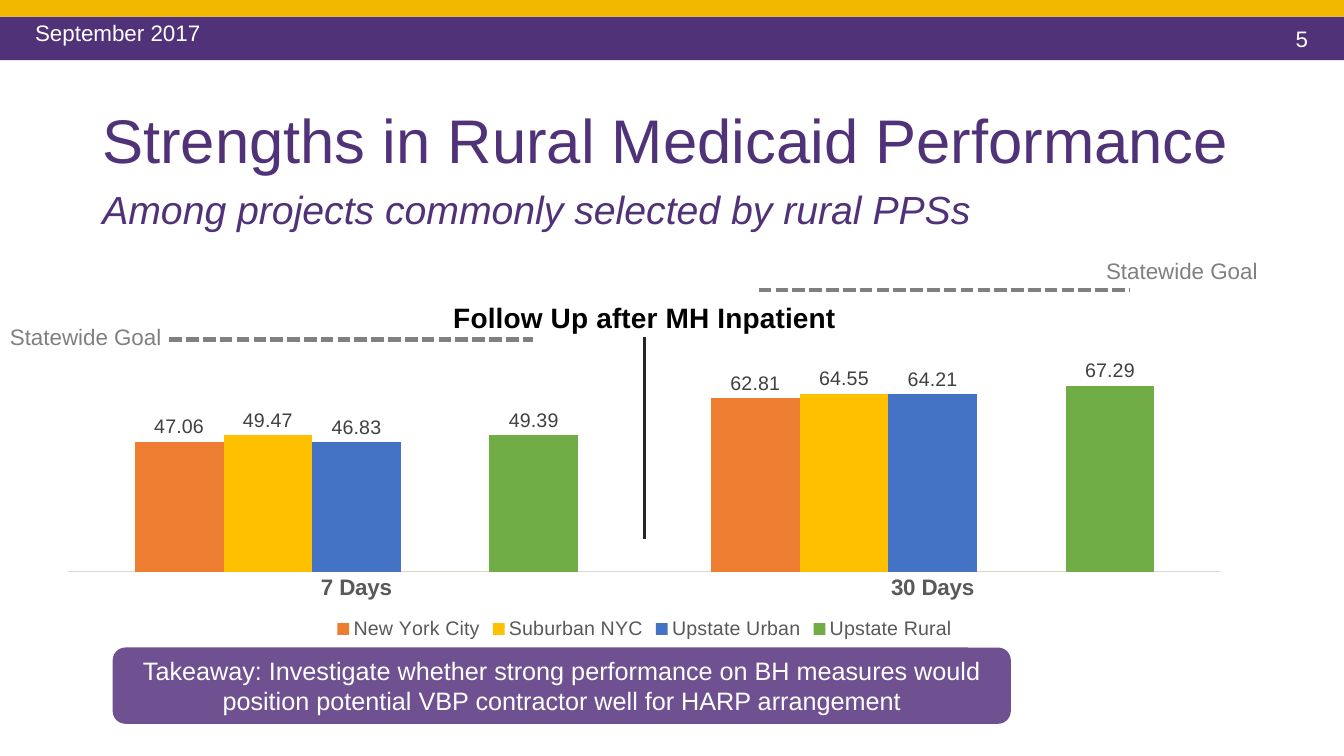
from lxml import etree
from pptx import Presentation
from pptx.chart.data import CategoryChartData
from pptx.dml.color import RGBColor
from pptx.enum.chart import XL_CHART_TYPE, XL_LABEL_POSITION, XL_LEGEND_POSITION, XL_TICK_MARK
from pptx.enum.dml import MSO_LINE
from pptx.enum.shapes import MSO_CONNECTOR, MSO_SHAPE
from pptx.enum.text import MSO_ANCHOR, PP_ALIGN
from pptx.oxml.ns import qn
from pptx.util import Pt

LEFT, CENTER, RIGHT = PP_ALIGN.LEFT, PP_ALIGN.CENTER, PP_ALIGN.RIGHT
TOP, MIDDLE = MSO_ANCHOR.TOP, MSO_ANCHOR.MIDDLE
RECTANGLE, ROUNDED = MSO_SHAPE.RECTANGLE, MSO_SHAPE.ROUNDED_RECTANGLE
COLUMNS = XL_CHART_TYPE.COLUMN_CLUSTERED
LEGEND_BOTTOM = XL_LEGEND_POSITION.BOTTOM
ABOVE_COLUMN = XL_LABEL_POSITION.OUTSIDE_END
NO_TICKS = XL_TICK_MARK.NONE
STRAIGHT = MSO_CONNECTOR.STRAIGHT
DASH = MSO_LINE.SQUARE_DOT

PURPLE = RGBColor(0x50, 0x32, 0x78)
LIGHT_PURPLE = RGBColor(0x6F, 0x50, 0x91)
GOLD = RGBColor(0xF2, 0xB8, 0x00)
WHITE = RGBColor(0xFF, 0xFF, 0xFF)
BLACK = RGBColor(0x00, 0x00, 0x00)
NEAR_BLACK = RGBColor(0x26, 0x26, 0x26)
LABEL_GRAY = RGBColor(0x40, 0x40, 0x40)
AXIS_GRAY = RGBColor(0x59, 0x59, 0x59)
GOAL_GRAY = RGBColor(0x80, 0x80, 0x80)
PALE_GRAY = RGBColor(0xD9, 0xD9, 0xD9)
ORANGE = RGBColor(0xED, 0x7D, 0x31)
YELLOW = RGBColor(0xFF, 0xC0, 0x00)
BLUE = RGBColor(0x44, 0x72, 0xC4)
GREEN = RGBColor(0x70, 0xAD, 0x47)

PERIODS = ["7 Days", "30 Days"]
SPACER = "Series 4"  # empty series that sets the rural column apart
FOLLOW_UP = [
    ("New York City", (47.06, 62.81), ORANGE),
    ("Suburban NYC", (49.47, 64.55), YELLOW),
    ("Upstate Urban", (46.83, 64.21), BLUE),
    (SPACER, (0, 0), YELLOW),
    ("Upstate Rural", (49.39, 67.29), GREEN),
]


class SlideBuilder:
    font_name = "Arial"

    def __init__(self, slide):
        self.slide = slide

    def style(self, font, size, color, bold=False, italic=False):
        font.name, font.size = self.font_name, Pt(size)
        font.bold, font.italic = bold, italic
        font.color.rgb = color

    def fill_text(self, shape, text, size, color, align=LEFT, anchor=TOP, spacing=1.0, italic=False):
        frame = shape.text_frame
        frame.word_wrap = True
        frame.vertical_anchor = anchor
        paragraph = frame.paragraphs[0]
        paragraph.text = text
        paragraph.alignment = align
        paragraph.line_spacing = spacing
        self.style(paragraph.font, size, color, italic=italic)

    def text(self, box, text, size, color, **options):
        shape = self.slide.shapes.add_textbox(*map(Pt, box))
        self.fill_text(shape, text, size, color, **options)

    def block(self, box, fill, kind=RECTANGLE):
        shape = self.slide.shapes.add_shape(kind, *map(Pt, box))
        shape.shadow.inherit = False
        shape.fill.solid()
        shape.fill.fore_color.rgb = fill
        shape.line.fill.background()
        return shape

    def line(self, start, end, color, width, dash=None):
        connector = self.slide.shapes.add_connector(STRAIGHT, *map(Pt, start + end))
        connector.line.color.rgb = color
        connector.line.width = Pt(width)
        if dash:
            connector.line.dash_style = dash
        properties = connector._element.find(qn("p:spPr"))
        etree.SubElement(properties, qn("a:effectLst"))

    def column_chart(self, box, title, categories, series_rows):
        data = CategoryChartData(number_format="#,##0.00")
        data.categories = categories
        for name, values, _ in series_rows:
            data.add_series(name, values)
        chart = self.slide.shapes.add_chart(COLUMNS, *map(Pt, box), data).chart
        self.style(chart.font, 10, BLACK)

        # Title and legend
        chart.has_title = True
        chart.chart_title.include_in_layout = False
        heading = chart.chart_title.text_frame.paragraphs[0]
        heading.text = title
        self.style(heading.font, 20, BLACK, bold=True)
        chart.has_legend = True
        chart.legend.position = LEGEND_BOTTOM
        chart.legend.include_in_layout = False
        self.style(chart.legend.font, 14, AXIS_GRAY)

        # Axes
        axis = chart.category_axis
        axis.major_tick_mark = axis.minor_tick_mark = NO_TICKS
        axis.format.line.color.rgb = PALE_GRAY
        axis.format.line.width = Pt(0.75)
        self.style(axis.tick_labels.font, 16, AXIS_GRAY, bold=True)
        chart.value_axis.visible = False
        chart.value_axis.has_major_gridlines = False
        chart.value_axis.minimum_scale = 0
        chart.value_axis.maximum_scale = 80

        # Columns and their values
        plot = chart.plots[0]
        plot.gap_width, plot.overlap = 150, 0
        plot.vary_by_categories = False
        for index, (series, row) in enumerate(zip(plot.series, series_rows)):
            series.format.fill.solid()
            series.format.fill.fore_color.rgb = row[2]
            if row[0] == SPACER:
                self.hide_legend_entry(chart, index)
                continue
            labels = series.data_labels
            labels.show_value = True
            labels.number_format = "#,##0.00"
            labels.number_format_is_linked = False
            labels.position = ABOVE_COLUMN
            self.style(labels.font, 14, LABEL_GRAY)
        self.place_plot(chart, x=0.02, y=0.19, w=0.96, h=0.61)

    def hide_legend_entry(self, chart, index):
        entry = etree.Element(qn("c:legendEntry"))
        etree.SubElement(entry, qn("c:idx")).set("val", str(index))
        etree.SubElement(entry, qn("c:delete")).set("val", "1")
        chart.legend._element.find(qn("c:legendPos")).addnext(entry)

    def place_plot(self, chart, **fractions):
        area = chart._chartSpace.find(".//" + qn("c:plotArea"))
        for old_layout in area.findall(qn("c:layout")):
            area.remove(old_layout)
        layout = etree.Element(qn("c:layout"))
        manual = etree.SubElement(layout, qn("c:manualLayout"))
        settings = {"layoutTarget": "inner", "xMode": "edge", "yMode": "edge", **fractions}
        for tag, value in settings.items():
            etree.SubElement(manual, qn("c:" + tag)).set("val", str(value))
        area.insert(0, layout)


def main():
    presentation = Presentation()
    presentation.slide_width, presentation.slide_height = Pt(960), Pt(540)
    builder = SlideBuilder(presentation.slides.add_slide(presentation.slide_layouts[6]))

    # Header band
    builder.block((0, 12, 960, 31), PURPLE)
    builder.block((0, 0, 960, 12), GOLD)
    builder.text((679, 14.5, 262.5, 26.5), "5", 16, WHITE, align=RIGHT)
    builder.text((18, 12, 300, 31), "September 2017", 16, WHITE, spacing=0.9)

    # Title and subtitle
    builder.text((66, 61, 828, 83), "Strengths in Rural Medicaid Performance", 44, PURPLE,
                 anchor=MIDDLE, spacing=0.9)
    builder.text((66, 109.5, 828, 83), "Among projects commonly selected by rural PPSs", 28, PURPLE,
                 anchor=MIDDLE, spacing=0.9, italic=True)

    # Takeaway
    takeaway = builder.block((80.5, 462.5, 641.5, 54.5), LIGHT_PURPLE, ROUNDED)
    builder.fill_text(takeaway, "Takeaway: Investigate whether strong performance on BH measures would "
                      "position potential VBP contractor well for HARP arrangement", 18, WHITE,
                      align=CENTER, anchor=MIDDLE)

    # Follow-up chart with a divider between the periods
    builder.column_chart((31.7, 201.6, 857.5, 258.5), "Follow Up after MH Inpatient", PERIODS, FOLLOW_UP)
    builder.line((460.5, 240.5), (460.5, 385), NEAR_BLACK, 2.25)

    # Statewide goals: line start, line end, line height, label corner
    for start, end, height, label_left, label_top in [
        (121, 380.5, 242.5, 0, 227.5),
        (542, 807, 207, 783, 180),
    ]:
        builder.line((start, height), (end, height), GOAL_GRAY, 3, DASH)
        builder.text((label_left, label_top, 126, 26.5), "Statewide Goal", 16, GOAL_GRAY)

    presentation.save("out.pptx")


if __name__ == "__main__":
    main()
